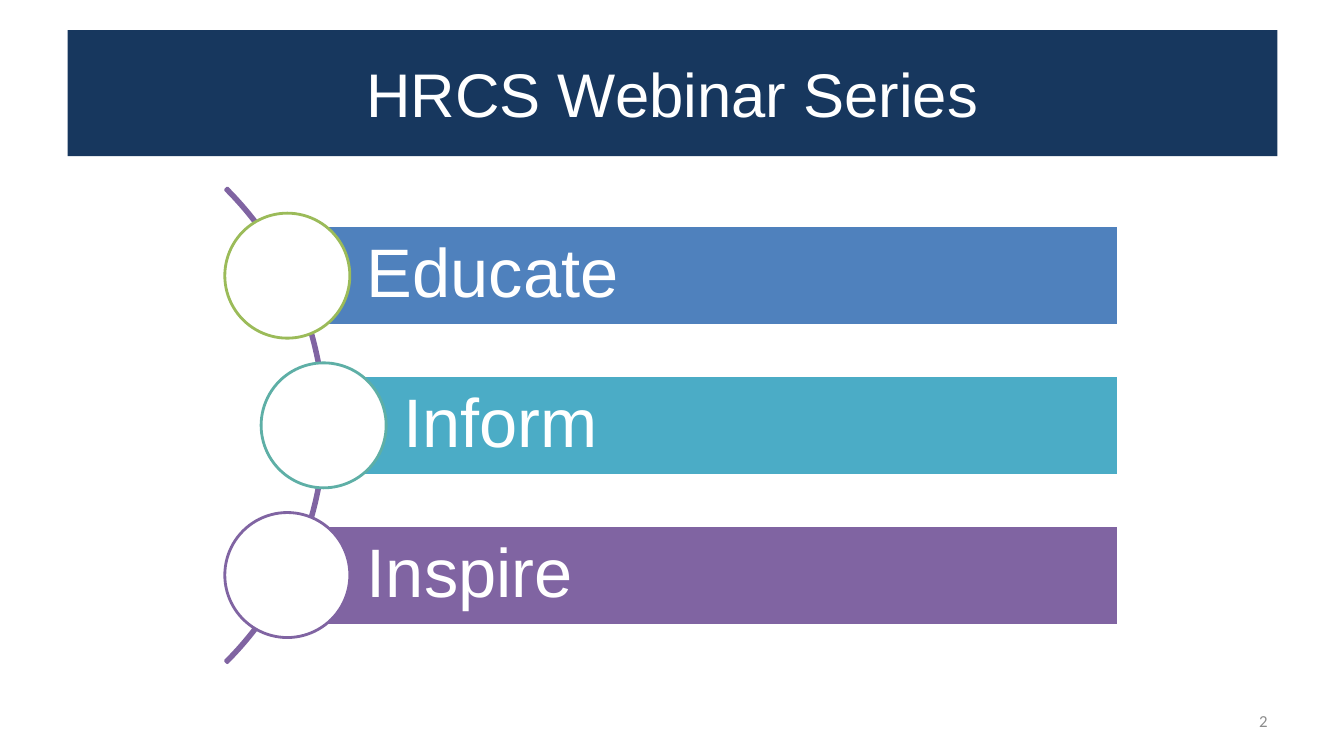
from dataclasses import dataclass

from pptx import Presentation
from pptx.dml.color import RGBColor
from pptx.enum.shapes import MSO_SHAPE
from pptx.enum.text import MSO_ANCHOR, PP_ALIGN
from pptx.shapes.autoshape import Shape
from pptx.slide import Slide
from pptx.text.text import TextFrame
from pptx.util import Inches, Pt


@dataclass(frozen=True)
class Theme:
    white: str = "FFFFFF"
    navy: str = "17375E"
    blue: str = "4F81BD"
    aqua: str = "4BACC6"
    purple: str = "8064A2"
    green: str = "9BBB59"
    teal: str = "5EAFA6"
    gray: str = "8C8C8C"
    font: str = "Arial"
    number_font: str = "Calibri"
    title_size: float = 44
    goal_size: float = 49
    number_size: float = 12
    outline: float = 2


@dataclass(frozen=True)
class Goal:
    label: str
    left: float
    fill: str
    ring: str


THEME = Theme()
GOALS = [
    Goal("Educate", 2.85, THEME.blue, THEME.green),
    Goal("Inform", 3.21, THEME.aqua, THEME.teal),
    Goal("Inspire", 2.85, THEME.purple, THEME.purple),
]
BAR_RIGHT, BAR_HEIGHT = 11.09, 0.99
CIRCLE_SIZE = 1.24
ARC_CENTER_X, ARC_CENTER_Y, ARC_SIZE = -0.1, 4.22, 6.66
GOAL_PITCH = 1.485


def add_figure(slide: Slide, kind: MSO_SHAPE, left: float, top: float, width: float,
               height: float, fill: str | None = None, line: str | None = None) -> Shape:
    figure = slide.shapes.add_shape(
        kind, Inches(left), Inches(top), Inches(width), Inches(height))
    figure.shadow.inherit = False
    if fill:
        figure.fill.solid()
        figure.fill.fore_color.rgb = RGBColor.from_string(fill)
    else:
        figure.fill.background()
    if line:
        figure.line.color.rgb = RGBColor.from_string(line)
        figure.line.width = Pt(THEME.outline)
    else:
        figure.line.fill.background()
    return figure


def write(frame: TextFrame, text: str, size: float, color: str, align: PP_ALIGN,
          font: str = THEME.font) -> None:
    frame.word_wrap = True
    frame.vertical_anchor = MSO_ANCHOR.MIDDLE
    paragraph = frame.paragraphs[0]
    paragraph.alignment = align
    run = paragraph.add_run()
    run.text = text
    run.font.size = Pt(size)
    run.font.name = font
    run.font.color.rgb = RGBColor.from_string(color)


def add_goal(slide: Slide, goal: Goal, center_y: float) -> None:
    """Draw a labelled bar with a circle centred on its left edge."""
    bar = add_figure(slide, MSO_SHAPE.RECTANGLE, goal.left, center_y - BAR_HEIGHT / 2,
                     BAR_RIGHT - goal.left, BAR_HEIGHT, goal.fill, THEME.white)
    frame = bar.text_frame
    frame.margin_left = Inches(0.79)
    frame.margin_top = frame.margin_right = frame.margin_bottom = Inches(0.14)
    write(frame, goal.label, THEME.goal_size, THEME.white, PP_ALIGN.LEFT)
    frame.paragraphs[0].line_spacing = 0.9
    add_figure(slide, MSO_SHAPE.OVAL, goal.left - CIRCLE_SIZE / 2,
               center_y - CIRCLE_SIZE / 2, CIRCLE_SIZE, CIRCLE_SIZE,
               THEME.white, goal.ring)


def add_arc(slide: Slide) -> None:
    arc = add_figure(slide, MSO_SHAPE.BLOCK_ARC, ARC_CENTER_X - ARC_SIZE / 2,
                     ARC_CENTER_Y - ARC_SIZE / 2, ARC_SIZE, ARC_SIZE, line=THEME.purple)
    for index, value in enumerate((189, 27, 0.004)):
        arc.adjustments[index] = value


def main() -> None:
    deck = Presentation()
    deck.slide_width, deck.slide_height = Inches(13.33), Inches(7.5)
    slide = deck.slides.add_slide(deck.slide_layouts[6])

    title = add_figure(slide, MSO_SHAPE.RECTANGLE, 0.67, 0.3, 12, 1.25, THEME.navy)
    write(title.text_frame, "HRCS Webinar Series", THEME.title_size, THEME.white,
          PP_ALIGN.CENTER)

    add_arc(slide)
    for index, goal in enumerate(GOALS):
        add_goal(slide, goal, ARC_CENTER_Y + (index - 1) * GOAL_PITCH)

    page_number = slide.shapes.add_textbox(
        Inches(9.56), Inches(6.95), Inches(3.11), Inches(0.4))
    write(page_number.text_frame, "2", THEME.number_size, THEME.gray, PP_ALIGN.RIGHT,
          THEME.number_font)

    deck.save("out.pptx")


if __name__ == "__main__":
    main()
